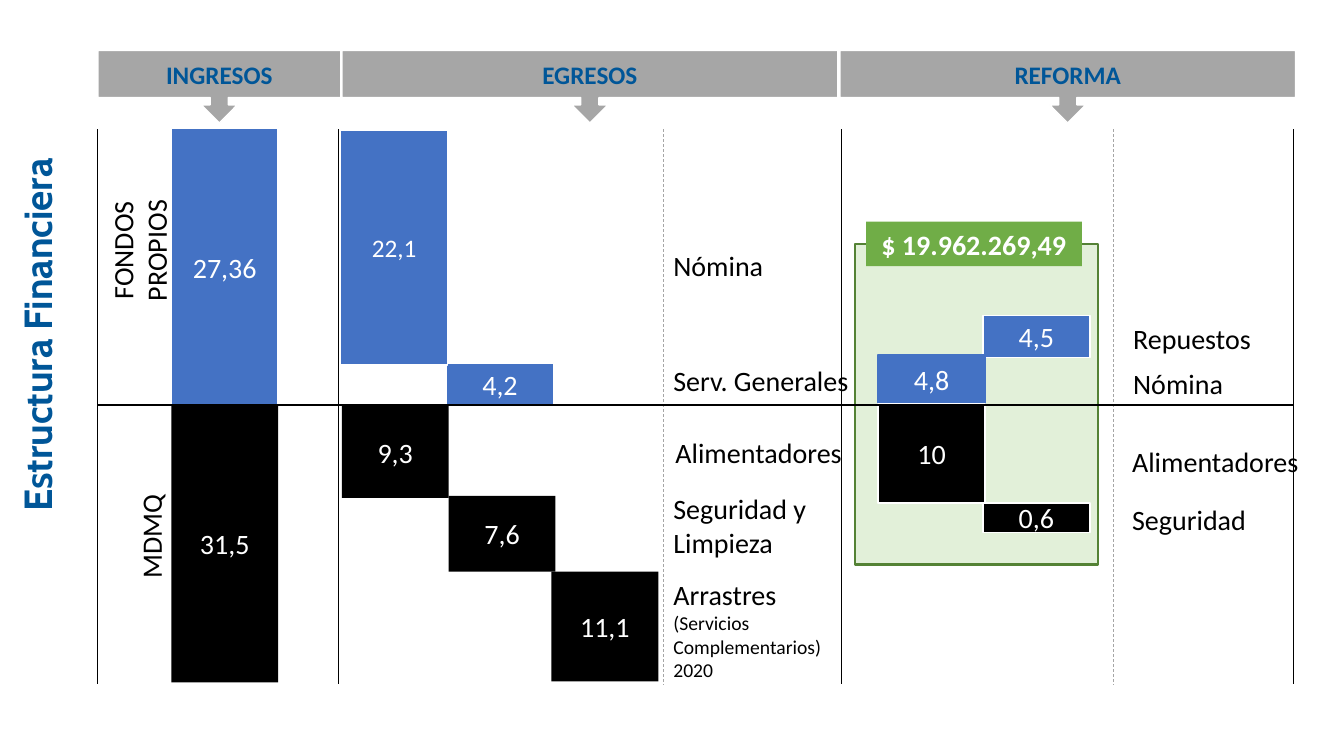
import pptx
import pptx.util
import pptx.dml.color
import pptx.enum.shapes
import pptx.enum.text
import pptx.enum.dml
import pptx.oxml.ns
import lxml.etree
from dataclasses import dataclass

Inches = pptx.util.Inches
Pt = pptx.util.Pt
SHAPES = pptx.enum.shapes.MSO_SHAPE
ALIGN = pptx.enum.text.PP_ALIGN
ANCHOR = pptx.enum.text.MSO_ANCHOR
FIT = pptx.enum.text.MSO_AUTO_SIZE


@dataclass(frozen=True)
class Theme:
    """Colours, fonts and type sizes of the slide."""
    blue: str = "4472C4"
    black: str = "000000"
    white: str = "FFFFFF"
    navy: str = "005698"
    header: str = "A6A6A6"
    dash: str = "A5A5A5"
    panel: str = "E2F0D9"
    panel_edge: str = "548235"
    badge: str = "70AD47"
    font: str = "Calibri"
    title_font: str = "Cabin"
    title: int = 28
    body: int = 20
    head: int = 18
    small: int = 14


T = Theme()
BLOCK_W = 1.06
AXIS_DY = 2.74


def rgb(color):
    """Turn a hex string into a colour."""
    return pptx.dml.color.RGBColor.from_string(color)


def style(font, size, color, bold=False, name=T.font):
    """Format the font of a run."""
    font.size, font.bold, font.name = Pt(size), bold, name
    font.color.rgb = rgb(color)


def add_box(s, at, fill, line=None, width=1, text="", size=T.body,
            color=T.white, bold=False, kind=SHAPES.RECTANGLE):
    """Add a filled shape with centred text."""
    sp = s.shapes.add_shape(kind, *map(Inches, at))
    sp.shadow.inherit = False
    sp.fill.solid()
    sp.fill.fore_color.rgb = rgb(fill)
    if line:
        sp.line.color.rgb = rgb(line)
        sp.line.width = Pt(width)
    else:
        sp.line.fill.background()
    if text:
        tf = sp.text_frame
        tf.text = text
        tf.vertical_anchor = ANCHOR.MIDDLE
        p = tf.paragraphs[0]
        p.alignment = ALIGN.CENTER
        style(p.runs[0].font, size, color, bold)
    return sp


def add_label(s, at, text, size=T.body, color=T.black, align=ALIGN.LEFT,
              rotation=0, bold=False, name=T.font):
    """Add a wrapped text box, one paragraph per line of text."""
    sp = s.shapes.add_textbox(*map(Inches, at))
    sp.rotation = rotation
    tf = sp.text_frame
    tf.word_wrap = True
    tf.auto_size = FIT.SHAPE_TO_FIT_TEXT
    tf.text = text
    for p in tf.paragraphs:
        p.alignment = align
        style(p.runs[0].font, size, color, bold, name)
    return sp


def add_line(s, x1, y1, x2, y2, color=T.black, width=0.5, dashed=False):
    """Add a straight line without a shadow."""
    c = s.shapes.add_connector(pptx.enum.shapes.MSO_CONNECTOR.STRAIGHT,
                               *map(Inches, (x1, y1, x2, y2)))
    c.line.color.rgb = rgb(color)
    c.line.width = Pt(width)
    if dashed:
        c.line.dash_style = pptx.enum.dml.MSO_LINE.DASH
    sp_pr = c._element.spPr
    lxml.etree.SubElement(sp_pr, pptx.oxml.ns.qn("a:effectLst"))


def add_blocks(s, x, y, blocks):
    """Add value blocks at offsets from a corner."""
    for dx, dy, height, fill, line, value, size in blocks:
        add_box(s, (x + dx, y + dy, BLOCK_W, height), fill, line,
                text=value, size=size)


def add_labels(s, x, y, labels):
    """Add row labels at offsets from a corner."""
    for dx, dy, width, height, text in labels:
        add_label(s, (x + dx, y + dy, width, height), text)


def title(s, box):
    """Place the vertical title in its box."""
    x, y, w, h = box
    add_label(s, (x + (w - h) / 2, y + (h - w) / 2, h, w),
              "Estructura Financiera", T.title, T.navy, ALIGN.CENTER, 270,
              True, T.title_font)


def headers(s, box):
    """Place the three column headings."""
    x, y, w, h = box
    for dx, width, text in ((0, 2.41, "INGRESOS"), (2.42, 4.92, "EGRESOS"),
                            (7.36, 4.52, "REFORMA")):
        add_box(s, (x + dx, y, width, h), T.header, T.white, text=text,
                size=T.head, color=T.navy, bold=True,
                kind=SHAPES.DOWN_ARROW_CALLOUT)


def income(s, box):
    """Place the income column."""
    x, y, w, h = box
    add_line(s, x, y, x, y + h)
    add_blocks(s, x, y, (
        (0.73, -0.01, 2.76, T.blue, T.white, "27,36", T.body),
        (0.73, 2.73, 2.76, T.black, None, "31,5", T.body)))
    add_label(s, (x - 0.62, y + 0.82, 2.06, 0.77), "FONDOS PROPIOS",
              align=ALIGN.CENTER, rotation=270)
    add_label(s, (x + 0.01, y + 3.82, 1.04, 0.44), "MDMQ", rotation=270)


def expenses(s, box):
    """Place the expenses column."""
    x, y, w, h = box
    add_line(s, x, y, x, y + h)
    add_line(s, x + 3.22, y, x + 3.22, y + h, T.dash, dashed=True)
    add_blocks(s, x, y, (
        (1.07, 2.32, 0.42, T.blue, T.white, "4,2", T.body),
        (0.02, 0.01, 2.33, T.blue, T.white, "22,1", T.head),
        (0.03, 2.75, 0.91, T.black, None, "9,3", T.body),
        (1.09, 3.64, 0.75, T.black, None, "7,6", T.body),
        (2.11, 4.39, 1.09, T.black, None, "11,1", T.body)))
    add_labels(s, x + 3.22, y, (
        (0, 1.14, 2.22, 0.44, "Nómina"),
        (0, 2.28, 2.22, 0.44, "Serv. Generales"),
        (0.02, 2.99, 2.31, 0.44, "Alimentadores"),
        (0, 3.55, 1.71, 0.77, "Seguridad y\nLimpieza")))
    sp = add_label(s, (x + 3.22, y + 4.4, 1.71, 1.14), "Arrastres ")
    r = sp.text_frame.paragraphs[0].add_run()
    r.text = "(Servicios Complementarios) 2020"
    style(r.font, T.small, T.black)


def reform(s, box):
    """Place the reform column with its panel and total."""
    x, y, w, h = box
    add_box(s, (x + 0.14, y + 1.14, 2.41, 3.18), T.panel, T.panel_edge, 2)
    for edge in (x, x + w):
        add_line(s, edge, y, edge, y + h)
    add_line(s, x + 2.7, y, x + 2.7, y + h, T.dash, dashed=True)
    add_blocks(s, x, y, (
        (1.41, 1.85, 0.42, T.blue, T.white, "4,5", T.body),
        (0.37, 2.24, 0.48, T.blue, T.blue, "4,8", T.body),
        (0.37, 2.73, 0.98, T.black, T.white, "10", T.body),
        (1.41, 3.71, 0.29, T.black, T.white, "0,6", T.body)))
    add_labels(s, x + 2.8, y, (
        (0, 1.86, 1.85, 0.44, "Repuestos"),
        (0, 2.31, 1.85, 0.44, "Nómina"),
        (-0.01, 3.08, 1.87, 0.44, "Alimentadores"),
        (-0.01, 3.66, 1.87, 0.44, "Seguridad")))
    add_box(s, (x + 0.25, y + 0.92, 2.14, 0.44), T.badge,
            text="$ 19.962.269,49", bold=True)


def main():
    """Build and save the slide."""
    prs = pptx.Presentation()
    prs.slide_width, prs.slide_height = Inches(13.33), Inches(7.5)
    s = prs.slides.add_slide(prs.slide_layouts[6])
    top, height = 1.28, 5.51
    income(s, (0.97, top, 2.39, height))
    expenses(s, (3.36, top, 4.98, height))
    reform(s, (8.34, top, 4.49, height))
    headers(s, (0.97, 0.5, 11.88, 0.72))
    title(s, (0.08, 0, 0.57, 6.65))
    add_line(s, 0.97, top + AXIS_DY, 12.82, top + AXIS_DY, width=1.5)
    prs.save("out.pptx")


if __name__ == "__main__":
    main()
